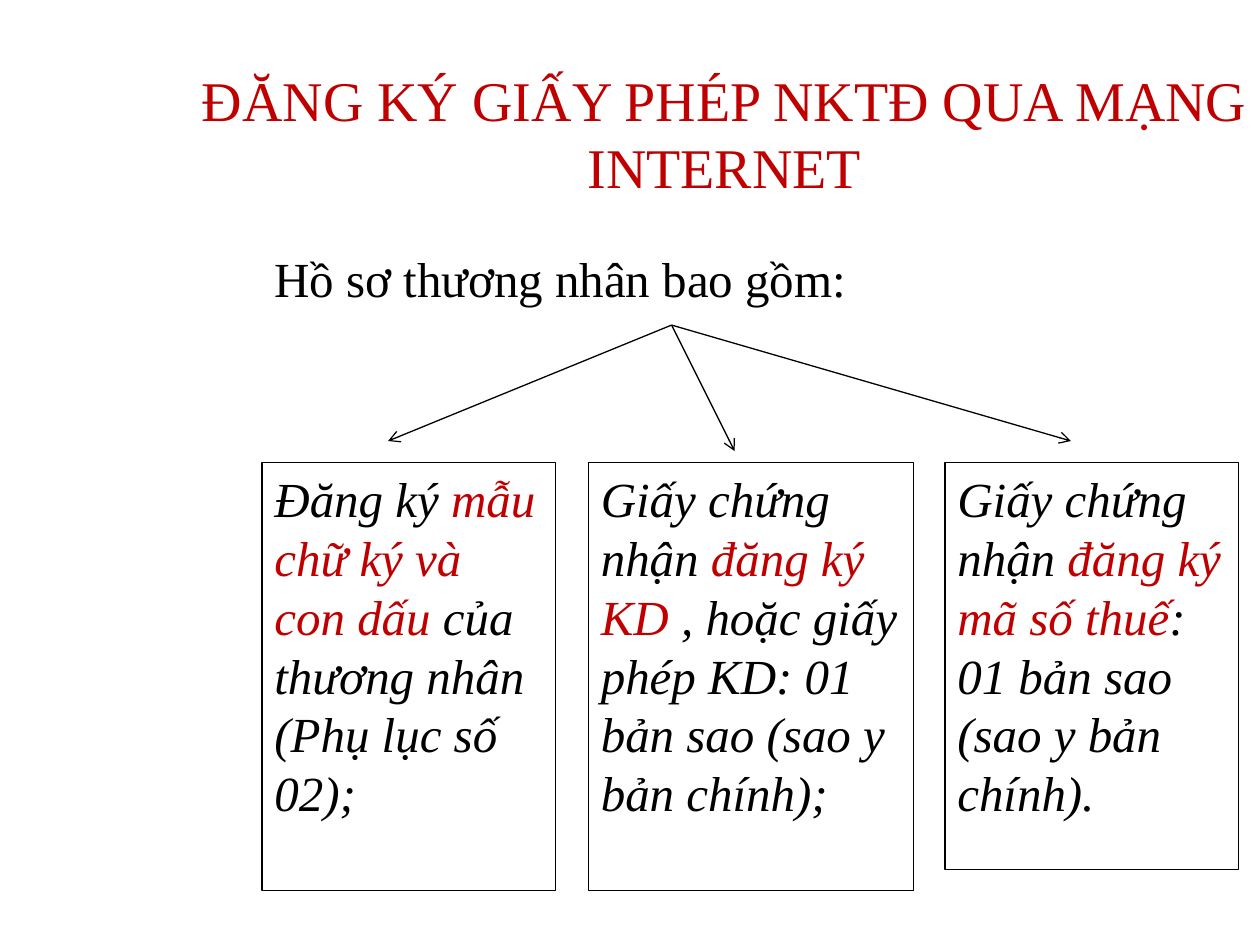
from typing import NamedTuple

from lxml import etree
from pptx import Presentation
from pptx.dml.color import RGBColor
from pptx.enum.shapes import MSO_CONNECTOR, MSO_SHAPE
from pptx.enum.text import MSO_ANCHOR, PP_ALIGN
from pptx.oxml.ns import qn
from pptx.util import Inches, Pt

RECTANGLE = MSO_SHAPE.RECTANGLE
STRAIGHT = MSO_CONNECTOR.STRAIGHT
TOP, MIDDLE = MSO_ANCHOR.TOP, MSO_ANCHOR.MIDDLE
LEFT, CENTER = PP_ALIGN.LEFT, PP_ALIGN.CENTER

FONT = "Times New Roman"
BLACK, RED = "000000", "C00000"
LINE_WIDTH = Pt(0.75)
BODY_SIZE = 28
BOX_TOP = 3.67
ARROW_START = (5.33, 2.58)


class Document(NamedTuple):
    left: float
    width: float
    height: float
    before: str
    highlight: str
    after: str
    arrow_end: tuple[float, float]


DOCUMENTS = [
    Document(2.08, 2.33, 3.4, "Đăng ký ", "mẫu chữ ký và con dấu ",
             "của thương nhân (Phụ lục số 02);", (3.08, 3.5)),
    Document(4.67, 2.58, 3.4, "Giấy chứng nhận ", "đăng ký KD ",
             ", hoặc giấy phép KD: 01 bản sao (sao y bản chính);", (5.83, 3.58)),
    Document(7.5, 2.33, 3.23, "Giấy chứng nhận ", "đăng ký mã số thuế",
             ": 01 bản sao (sao y bản chính).", (8.5, 3.5)),
]


def rgb(value: str) -> RGBColor:
    return RGBColor.from_string(value)


def write(shape, spans: list[tuple[str, str]], size: float, align=LEFT,
          anchor=TOP, italic: bool = False) -> None:
    """Fill the shape with one paragraph of (text, colour) spans."""
    frame = shape.text_frame
    frame.word_wrap = True
    frame.vertical_anchor = anchor
    para = frame.paragraphs[0]
    para.alignment = align
    para.font.name = FONT
    para.font.size = Pt(size)
    para.font.italic = italic
    for text, color in spans:
        span = para.add_run()
        span.text = text
        span.font.color.rgb = rgb(color)


def add_title(slide, text: str) -> None:
    title = slide.shapes.title
    title.left, title.top = Inches(1.5), Inches(0.25)
    title.width, title.height = Inches(8.5), Inches(1.61)
    write(title, [(text, RED)], 32, CENTER, MIDDLE)


def add_intro(slide, text: str) -> None:
    intro = slide.shapes.add_textbox(
        Inches(2.08), Inches(1.92), Inches(7.92), Inches(1.92))
    write(intro, [(text, BLACK)], BODY_SIZE)


def add_document(slide, document: Document) -> None:
    box = slide.shapes.add_shape(
        RECTANGLE, Inches(document.left), Inches(BOX_TOP),
        Inches(document.width), Inches(document.height))
    box.shadow.inherit = False
    box.fill.background()
    box.line.color.rgb = rgb(BLACK)
    box.line.width = LINE_WIDTH
    spans = [(document.before, BLACK), (document.highlight, RED),
             (document.after, BLACK)]
    write(box, spans, BODY_SIZE, italic=True)


def add_arrow(slide, start: tuple[float, float], end: tuple[float, float]) -> None:
    arrow = slide.shapes.add_connector(
        STRAIGHT, *(Inches(value) for value in start + end))
    arrow.line.color.rgb = rgb(BLACK)
    arrow.line.width = LINE_WIDTH
    etree.SubElement(arrow.line._get_or_add_ln(), qn("a:tailEnd"), type="arrow")
    etree.SubElement(arrow._element.spPr, qn("a:effectLst"))


def main() -> None:
    deck = Presentation()
    deck.slide_width, deck.slide_height = Inches(10), Inches(7.5)
    slide = deck.slides.add_slide(deck.slide_layouts.get_by_name("Title Only"))
    add_title(slide, "ĐĂNG KÝ GIẤY PHÉP NKTĐ QUA MẠNG INTERNET")
    add_intro(slide, "Hồ sơ thương nhân bao gồm:")
    for document in DOCUMENTS:
        add_document(slide, document)
    for document in DOCUMENTS:
        add_arrow(slide, ARROW_START, document.arrow_end)
    deck.save("out.pptx")


if __name__ == "__main__":
    main()
